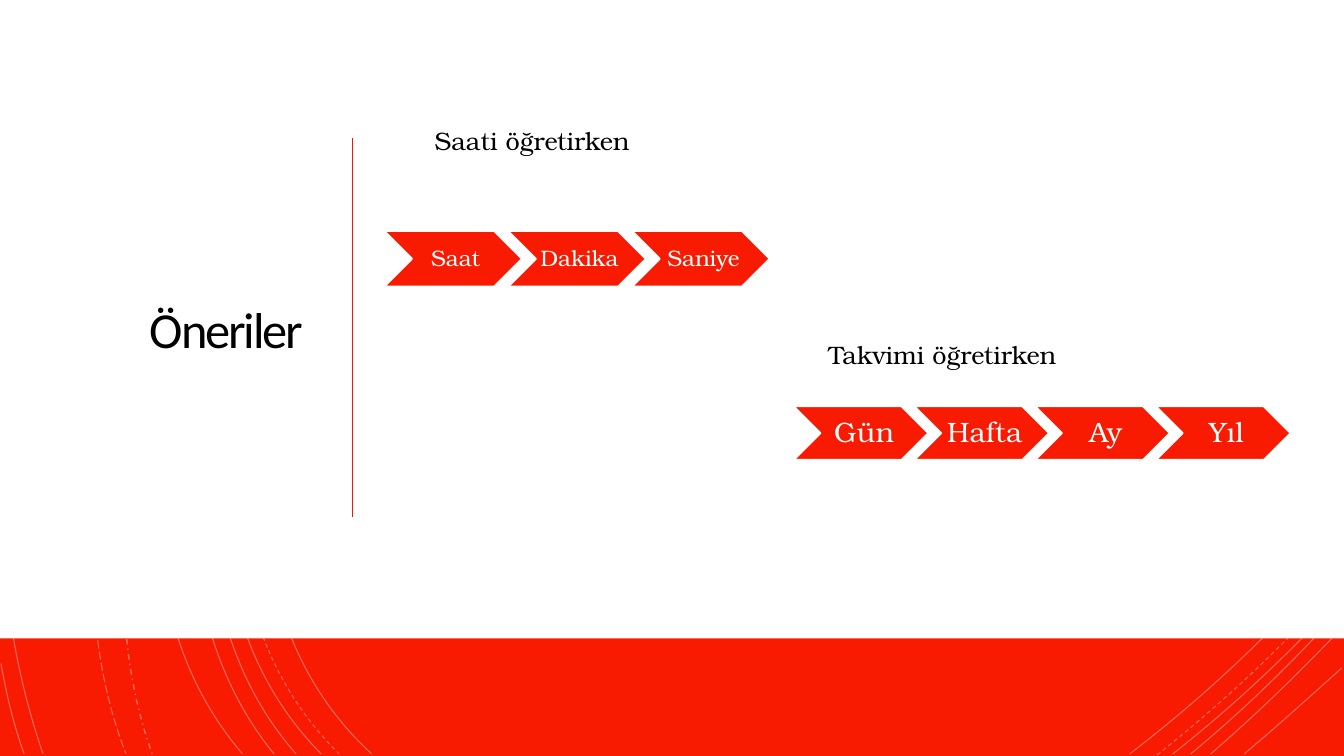
from lxml.etree import SubElement
from pptx import Presentation
from pptx.dml.color import RGBColor
from pptx.enum.dml import MSO_LINE as DASH
from pptx.enum.shapes import MSO_CONNECTOR, MSO_SHAPE as SHAPE
from pptx.enum.text import MSO_ANCHOR as ANCHOR, MSO_AUTO_SIZE as FIT, PP_ALIGN as ALIGN
from pptx.oxml.ns import qn
from pptx.util import Pt

PX = 9525  # EMU in one px, 96 px to the inch
COLORS = {name: RGBColor.from_string(code) for name, code in {
    "red": "F81B02", "rule": "ED1A02", "white": "FFFFFF", "black": "000000"}.items()}
SERIF = "TeX Gyre Bonum"


def add_block(kind, left, top, width, height, color):
    block = slide.shapes.add_shape(kind, left * PX, top * PX, width * PX, height * PX)
    block.shadow.inherit = False
    block.fill.solid()
    block.fill.fore_color.rgb = COLORS[color]
    block.line.fill.background()
    return block


def write(frame, text, size, font, color, align, spacing, insets):
    frame.auto_size = FIT.NONE
    frame.vertical_anchor = ANCHOR.MIDDLE
    frame.margin_left, frame.margin_top, frame.margin_right, frame.margin_bottom = (
        inset * PX for inset in insets)
    paragraph = frame.paragraphs[0]
    paragraph.alignment = align
    paragraph.line_spacing = spacing
    run = paragraph.add_run()
    run.text = text
    run.font.size = Pt(size)
    run.font.name = font
    run.font.color.rgb = COLORS[color]
    return run


prs = Presentation()
prs.slide_width, prs.slide_height = 1280 * PX, 720 * PX
slide = prs.slides.add_slide(prs.slide_layouts[5])

# Red ground
add_block(SHAPE.RECTANGLE, 0, 0, 1280, 720, "red")

# Decorative curves: Bezier points, dash, line width
curves = [
    # Left sweep
    ((542, 0), (302, 110), (137, 518), (354, 718), DASH.SOLID, 0.75),
    ((504, 0), (274, 120), (118, 516), (323, 718), DASH.DASH, 0.75),
    ((486, 0), (259, 122), (106, 516), (306, 718), DASH.SOLID, 0.75),
    ((445, 0), (234, 128), (106, 519), (282, 718), DASH.SOLID, 0.75),
    ((433, 0), (222, 132), (93, 512), (261, 718), DASH.SOLID, 0.75),
    ((410, 0), (208, 141), (51, 508), (231, 718), DASH.SOLID, 0.75),
    ((348, 0), (180, 159), (62, 489), (145, 718), DASH.DASH_DOT, 1),
    ((337, 0), (151, 162), (28, 479), (120, 718), DASH.LONG_DASH, 0.75),
    ((208, 0), (11, 178), (-44, 470), (41, 718), DASH.SOLID, 0.75),
    ((1, 632), (6, 661), (13, 690), (23, 718), DASH.SOLID, 0.75),
    # Right corner
    ((1076, 718), (1149, 662), (1218, 597), (1278, 526), DASH.SOLID, 0.75),
    ((1102, 719), (1164, 670), (1224, 614), (1277, 554), DASH.DASH, 0.75),
    ((1117, 718), (1174, 673), (1229, 622), (1278, 567), DASH.SOLID, 0.75),
    ((1134, 718), (1185, 676), (1233, 629), (1278, 579), DASH.SOLID, 0.75),
    ((1153, 718), (1196, 681), (1238, 640), (1278, 598), DASH.SOLID, 0.75),
    ((1185, 718), (1216, 692), (1247, 664), (1278, 636), DASH.SOLID, 0.75),
]
for start, pull_a, pull_b, end, dash, weight in curves:
    builder = slide.shapes.build_freeform(*start, scale=PX)
    builder.add_line_segments([pull_a, pull_b, end], close=False)
    curve = builder.convert_to_shape()
    # Join the three segments into one cubic Bezier
    outline = next(curve.element.iter(qn("a:path")))
    bend = SubElement(outline, qn("a:cubicBezTo"))
    for segment in outline.findall(qn("a:lnTo")):
        bend.append(segment[0])
        outline.remove(segment)
    curve.shadow.inherit = False
    curve.fill.background()
    curve.line.color.rgb = COLORS["white"]
    curve.line.width = Pt(weight)
    curve.line.dash_style = dash
    tint = next(curve.element.spPr.iter(qn("a:srgbClr")))
    SubElement(tint, qn("a:alpha"), val="35000")

# White panel above the red band
add_block(SHAPE.RECTANGLE, 0, 0, 1280, 608, "white")

# Title, brought in front of the panel
title = slide.shapes.title
title.left, title.top, title.width, title.height = 37 * PX, 98 * PX, 276 * PX, 438 * PX
heading = write(title.text_frame, "Öneriler", 36, "Calibri", "black", ALIGN.RIGHT, 0.85, (24,) * 4)
heading.font._element.set("spc", "-150")
title.element.getparent().append(title.element)

# Vertical rule
rule = slide.shapes.add_connector(MSO_CONNECTOR.STRAIGHT, 336 * PX, 131 * PX, 336 * PX, 492 * PX)
rule.line.color.rgb = COLORS["rule"]
rule.line.width = Pt(0.75)
SubElement(rule.element.spPr, qn("a:effectLst"))

# Sequences: caption, its box, its left inset; steps, first chevron, pitch, text size, insets
sequences = [
    ("Saati öğretirken", (404, 90, 244, 82), 10,
     ["Saat", "Dakika", "Saniye"], (366, 220, 131, 53), 118, 16, (7, 2, 2, 2)),
    ("Takvimi öğretirken", (756, 272, 348, 126), 33,
     ["Gün", "Hafta", "Ay", "Yıl"], (756, 387, 128, 51), 115, 20, (9, 3, 3, 3)),
]
for caption, box, indent, units, (left, top, width, height), pitch, size, insets in sequences:
    label = slide.shapes.add_textbox(*(length * PX for length in box)).text_frame
    label.word_wrap = True
    write(label, caption, 18, SERIF, "black", ALIGN.LEFT, 1.2, (indent, 5, 10, 5))
    label.paragraphs[0].space_before = Pt(10)
    for i, unit in enumerate(units):
        chevron = add_block(SHAPE.CHEVRON, left + i * pitch, top, width, height, "red")
        chevron.line.color.rgb = COLORS["white"]
        chevron.line.width = Pt(1.25)
        chevron.text_frame.word_wrap = False
        write(chevron.text_frame, unit, size, SERIF, "white", ALIGN.CENTER, 0.9, insets)

prs.save("out.pptx")
